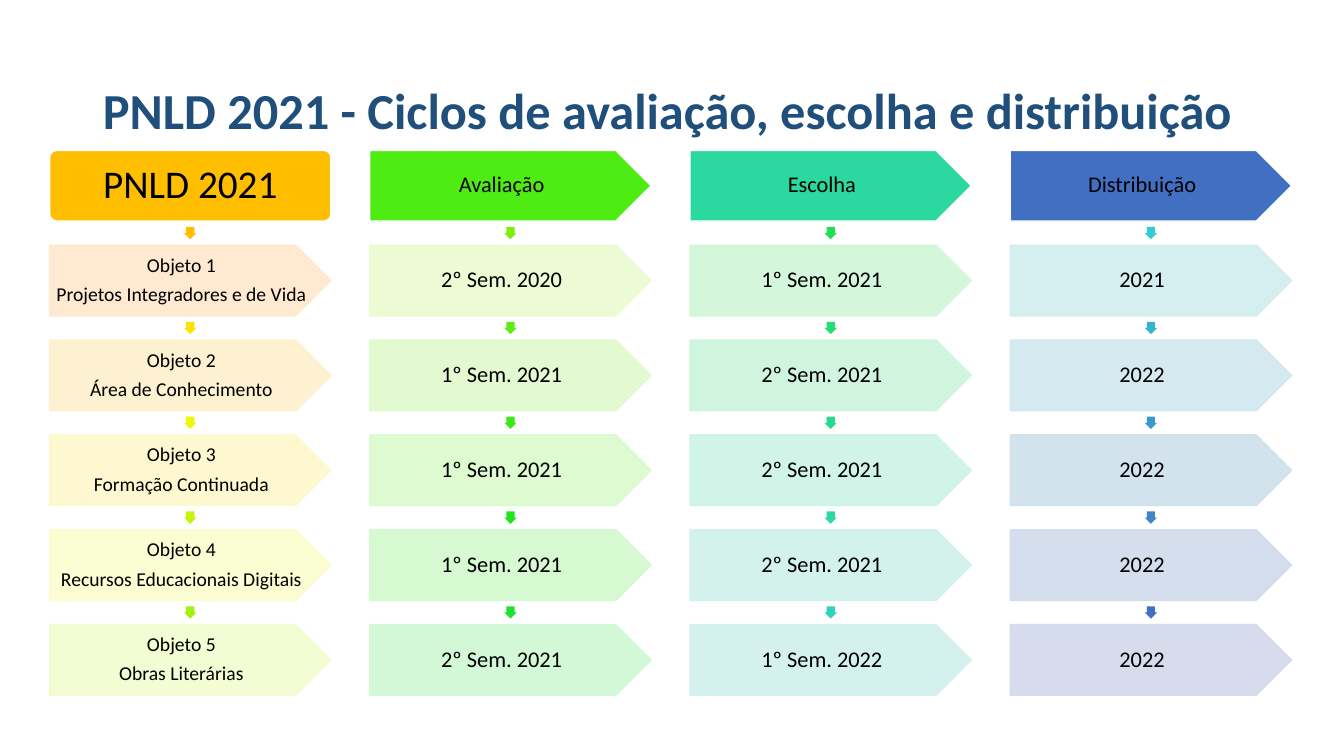
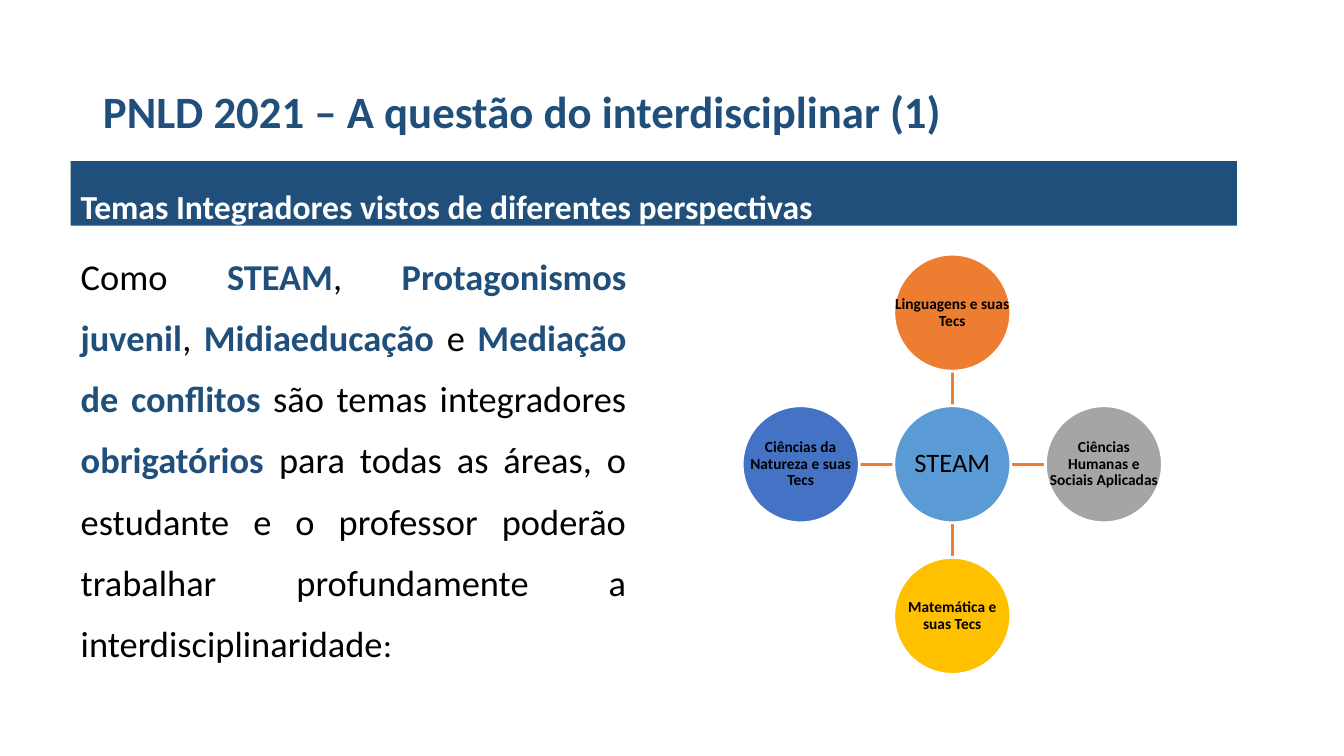
from lxml import etree
from pptx import Presentation
from pptx.dml.color import RGBColor
from pptx.enum import shapes, text
from pptx.oxml import ns
from pptx.util import Cm, Pt

FONT = "Calibri"
NAVY = RGBColor(0x1F, 0x4F, 0x7A)
BLACK = RGBColor(0, 0, 0)
WHITE = RGBColor(255, 255, 255)
SKY = RGBColor(0x5B, 0x9B, 0xD5)
ORANGE = RGBColor(0xED, 0x7D, 0x31)
GREY = RGBColor(0xA5, 0xA5, 0xA5)
GOLD = RGBColor(0xFF, 0xC0, 0x00)
BLUE = RGBColor(0x44, 0x72, 0xC4)


def hues(codes):
    return [RGBColor.from_string(code) for code in codes.split()]


HEADS = hues("FFBF00 4FEC13 2BD9A0 416FC2")
DOTS = [hues("FFBF00 FCE303 EDF906 C6F40B A2F20D"),
        hues("80EF10 5FEC13 3CE916 20E41B 1EE136"),
        hues("20DF55 26DD74 29DA8E 2DD7A8 31D2BE"),
        hues("33CCD0 36B3CD 399BCA 3D85C7 416FC2")]
TINTS = [hues("FFE8CC FEF0CD FEF8CD FBFDCE F2FCCF"),
         hues("EAFBD0 E1FACD DAFACD D3F9CE CFF8D3"),
         hues("D0F7D8 CBF5DB CDF3E6 CFF1E9 D0F0ED"),
         hues("D1EDEF D1E8EF CFE1ED D0DBEC D2D9EA")]

# Each column: heading, heading size, cell size, cells
CYCLES = [
    ("PNLD 2021", 28, 14, ["Objeto 1\nProjetos Integradores e de Vida",
                           "Objeto 2\nÁrea de Conhecimento",
                           "Objeto 3\nFormação Continuada",
                           "Objeto 4\nRecursos Educacionais Digitais",
                           "Objeto 5\nObras Literárias"]),
    ("Avaliação", 16, 16, ["2º Sem. 2020", "1º Sem. 2021", "1º Sem. 2021",
                           "1º Sem. 2021", "2º Sem. 2021"]),
    ("Escolha", 16, 16, ["1º Sem. 2021", "2º Sem. 2021", "2º Sem. 2021",
                         "2º Sem. 2021", "1º Sem. 2022"]),
    ("Distribuição", 16, 16, ["2021", "2022", "2022", "2022", "2022"]),
]

# Odd pieces are highlighted
THEMES = ["Como ", "STEAM", ", ", "Protagonismos juvenil", ", ",
          "Midiaeducação", " e ", "Mediação de conflitos",
          " são temas integradores ", "obrigatórios",
          " para todas as áreas, o estudante e o professor poderão "
          "trabalhar profundamente a interdisciplinaridade"]

# Each area: direction from the hub (x, y), fill, label
AREAS = [(0, -1, ORANGE, "Linguagens e suas Tecs"),
         (1, 0, GREY, "Ciências Humanas e Sociais Aplicadas"),
         (0, 1, GOLD, "Matemática e suas Tecs"),
         (-1, 0, BLUE, "Ciências da Natureza e suas Tecs")]


def style(run, size, color=BLACK, bold=False):
    font = run.font
    font.name, font.size, font.bold = FONT, Pt(size), bold
    font.color.rgb = color


def write(frame, words, size, color=BLACK, bold=False, inset=None,
          align=text.PP_ALIGN.CENTER, anchor=text.MSO_ANCHOR.MIDDLE,
          lead=0.9, after=0):
    frame.text = words
    frame.word_wrap = True
    frame.vertical_anchor = anchor
    if inset is not None:
        frame.margin_left = frame.margin_right = Cm(inset)
        frame.margin_top = frame.margin_bottom = Cm(inset)
    for para in frame.paragraphs:
        para.alignment = align
        para.line_spacing = lead
        para.space_before, para.space_after = Pt(0), Pt(after)
        for run in para.runs:
            style(run, size, color, bold)


def place(shape, x, y, w, h):
    shape.left, shape.top = Cm(x), Cm(y)
    shape.width, shape.height = Cm(w), Cm(h)


def draw(slide, kind, x, y, w, h, fill, line=None, width=1):
    shape = slide.shapes.add_shape(kind, Cm(x), Cm(y), Cm(w), Cm(h))
    shape.shadow.inherit = False
    shape.fill.solid()
    shape.fill.fore_color.rgb = fill
    if line is None:
        shape.line.fill.background()
    else:
        shape.line.color.rgb = line
        shape.line.width = Pt(width)
    return shape


def fade(shape):
    """Make the fill and the line slightly transparent."""
    for color in list(shape._element.spPr.iter(ns.qn("a:srgbClr"))):
        etree.SubElement(color, ns.qn("a:alpha"), val="90000")


def link(slide, x1, y1, x2, y2):
    line = slide.shapes.add_connector(
        shapes.MSO_CONNECTOR.STRAIGHT, Cm(x1), Cm(y1), Cm(x2), Cm(y2))
    line.line.color.rgb = ORANGE
    line.line.width = Pt(2)
    etree.SubElement(line._element.spPr, ns.qn("a:effectLst"))


def title(slide, words, size):
    head = slide.shapes.title
    place(head, 2.34, 1.02, 29.21, 3.68)
    write(head.text_frame, words, size, NAVY, True,
          align=text.PP_ALIGN.LEFT)


def column(slide, x, y, w, h, step, index):
    """Draw a heading and its cells, with an arrow in each gap."""
    name, large, small, cells = CYCLES[index]
    kind = shapes.MSO_SHAPE
    first = index == 0
    head = draw(slide, kind.ROUNDED_RECTANGLE if first else kind.PENTAGON,
                x, y, w, h, HEADS[index], WHITE)
    head.adjustments[0] = 0.1 if first else 0.5
    write(head.text_frame, name, large, inset=0.05)
    dot = 0.31
    for row, words in enumerate(cells):
        top = y + (row + 1) * step
        arrow = draw(slide, kind.DOWN_ARROW, x + (w - dot) / 2,
                     top - (step - h + dot) / 2, dot, dot, DOTS[index][row])
        arrow.adjustments[0], arrow.adjustments[1] = 0.67, 0.5
        tint = TINTS[index][row]
        cell = draw(slide, kind.PENTAGON, x, top, w, h, tint, tint)
        fade(cell)
        write(cell.text_frame, words, small, inset=0.05, after=5.8)


def disc(slide, x, y, size, fill, words, points, bold):
    """Draw a circle round x, y with a label as wide as the circle."""
    box = x - size / 2, y - size / 2, size, size
    draw(slide, shapes.MSO_SHAPE.OVAL, *box, fill, WHITE, 2)
    label = slide.shapes.add_textbox(*map(Cm, box))
    write(label.text_frame, words, points, bold=bold, inset=0.03)


def wheel(slide, x, y, size, reach):
    """Draw the hub at x, y and the areas around it."""
    edge = size / 2
    far = reach - edge
    for dx, dy, fill, words in AREAS:
        link(slide, x + dx * edge, y + dy * edge, x + dx * far, y + dy * far)
        disc(slide, x + dx * reach, y + dy * reach, size, fill, words,
             11, True)
    disc(slide, x, y, size, SKY, "STEAM", 19, False)


def band(slide, x, y, w, h, words):
    bar = draw(slide, shapes.MSO_SHAPE.RECTANGLE, x, y, w, h, NAVY)
    write(bar.text_frame, words, 24, WHITE, True, lead=1.5,
          align=text.PP_ALIGN.JUSTIFY, anchor=text.MSO_ANCHOR.TOP)


def prose(slide, x, y, w, h):
    body = slide.placeholders[1]
    place(body, x, y, w, h)
    frame = body.text_frame
    frame.auto_size = text.MSO_AUTO_SIZE.NONE
    para = frame.paragraphs[0]
    props = para._p.get_or_add_pPr()
    props.set("marL", "0")
    props.set("indent", "0")
    etree.SubElement(props, ns.qn("a:buNone"))
    para.alignment = text.PP_ALIGN.JUSTIFY
    para.line_spacing = 1.4
    para.space_before = Pt(0)
    for place_no, words in enumerate(THEMES):
        run = para.add_run()
        run.text = words
        bold = place_no % 2 == 1
        style(run, 26, NAVY if bold else BLACK, bold)
    colon = para.add_run()
    colon.text = ":"
    style(colon, 24)


def cycles(deck):
    slide = deck.slides.add_slide(deck.slide_layouts[5])
    for index in range(len(CYCLES)):
        column(slide, 1.25 + index * 8.07, 3.79, 7.09, 1.78, 2.39, index)
    title(slide, "PNLD 2021 - Ciclos de avaliação, escolha e distribuição",
          36)


def topics(deck):
    slide = deck.slides.add_slide(deck.slide_layouts[1])
    title(slide, "PNLD 2021 – A questão do interdisciplinar (1)", 32)
    prose(slide, 1.78, 5.84, 14.27, 11.18)
    band(slide, 1.78, 4.06, 29.39, 1.63,
         "Temas Integradores vistos de diferentes perspectivas")
    wheel(slide, 24, 11.7, 2.95, 3.82)


def main():
    deck = Presentation()
    deck.slide_width, deck.slide_height = Cm(33.87), Cm(19.05)
    cycles(deck)
    topics(deck)
    deck.save("out.pptx")


if __name__ == "__main__":
    main()
